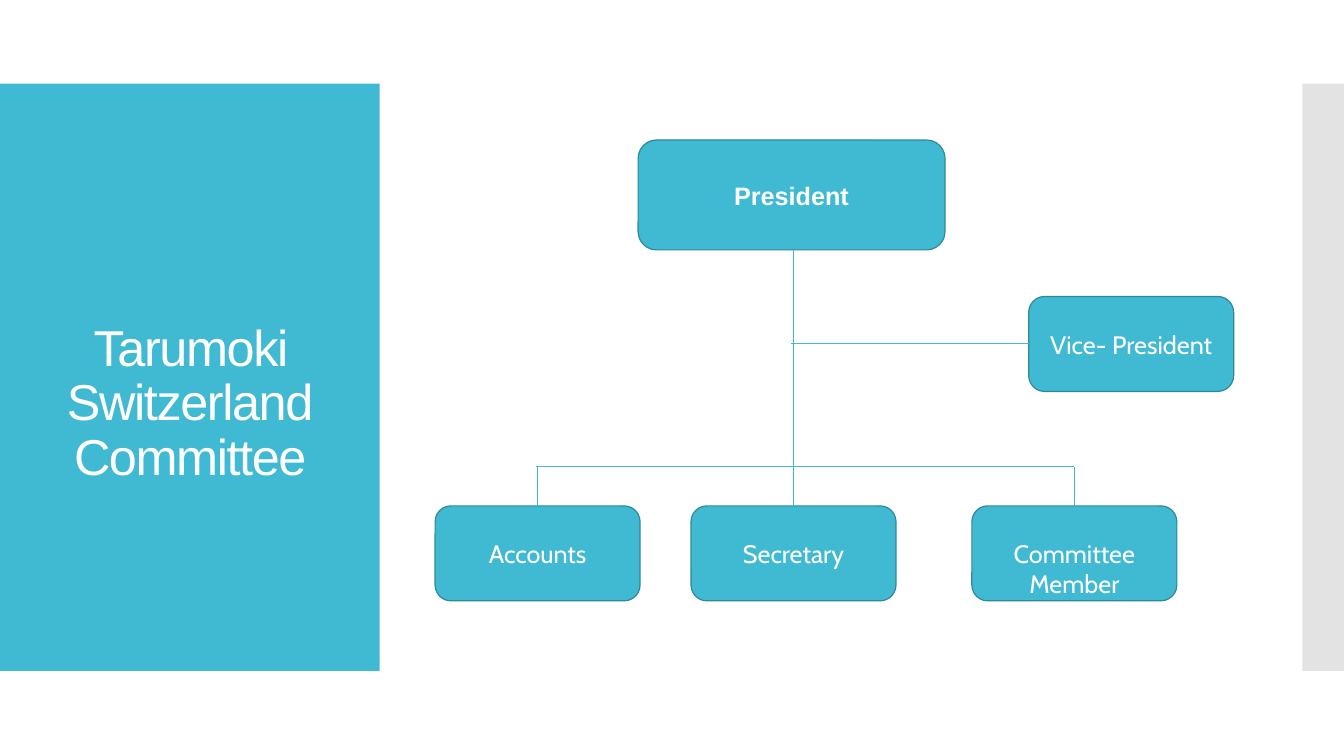
from lxml import etree
from pptx import Presentation
from pptx.dml.color import RGBColor
from pptx.enum.shapes import MSO_CONNECTOR, MSO_SHAPE
from pptx.enum.text import MSO_ANCHOR, PP_ALIGN
from pptx.oxml.ns import qn
from pptx.util import Pt

TEAL = RGBColor(0x40, 0xBA, 0xD2)
EDGE = RGBColor(0x2F, 0x88, 0x99)
GREY = RGBColor(0xC8, 0xC8, 0xC8)
WHITE = RGBColor(0xFF, 0xFF, 0xFF)
RECT, ROUND = MSO_SHAPE.RECTANGLE, MSO_SHAPE.ROUNDED_RECTANGLE
LINE = MSO_CONNECTOR.STRAIGHT
MIDDLE, CENTER = MSO_ANCHOR.MIDDLE, PP_ALIGN.CENTER

deck = Presentation()
deck.slide_width, deck.slide_height = Pt(960), Pt(540)
slide = deck.slides.add_slide(deck.slide_layouts[6])
shapes = slide.shapes


def write(shape, text, size, font, top=3.6, bottom=3.6, bold=False):
    frame = shape.text_frame
    frame.text = text
    frame.word_wrap = True
    frame.vertical_anchor = MIDDLE
    frame.margin_left = frame.margin_right = Pt(3.6)
    frame.margin_top, frame.margin_bottom = Pt(top), Pt(bottom)
    for para in frame.paragraphs:
        para.alignment = CENTER
        for run in para.runs:
            run.font.size, run.font.name = Pt(size), font
            run.font.bold = bold
            run.font.color.rgb = WHITE


def link(x1, y1, x2, y2, box=None, side=0):
    line = shapes.add_connector(LINE, Pt(x1), Pt(y1), Pt(x2), Pt(y2))
    line.line.color.rgb = TEAL
    line.line.width = Pt(0.75)
    etree.SubElement(line._element.spPr, qn("a:effectLst"))
    if box is not None:
        line.begin_connect(box, side)


# Side bands
for left, width, color in ((0, 271.2, TEAL), (930.2, 29.8, GREY)):
    band = shapes.add_shape(RECT, Pt(left), Pt(59.8), Pt(width), Pt(419.5))
    band.shadow.inherit = False
    band.fill.solid()
    band.fill.fore_color.rgb = color
    band.line.fill.background()

# The grey band is half transparent
tint = band._element.spPr.find(".//" + qn("a:srgbClr"))
etree.SubElement(tint, qn("a:alpha"), val="50000")

# Title, set below the middle of its box
title = shapes.add_textbox(Pt(20), Pt(88.6), Pt(231.8), Pt(362))
write(title, "Tarumoki Switzerland\nCommittee", 36, "Arial", top=42)
for para in title.text_frame.paragraphs:
    para.line_spacing = 0.9
    for run in para.runs:
        run.font._element.set("spc", "-100")

# Boxes: name, left, top, width, height, font
WIDE, HIGH, ROW, BUS = 146.4, 67.8, 361.4, 333.4
roles = (
    ("President", 455.8, 100, 219.2, 78.5, "Arial"),
    ("Vice- President", 734.8, 211.8, WIDE, HIGH, "Cabin"),
    ("Accounts", 310.8, ROW, WIDE, HIGH, "Cabin"),
    ("Secretary", 493.6, ROW, WIDE, HIGH, "Cabin"),
    ("Committee Member", 694.2, ROW, WIDE, HIGH, "Cabin"),
)
boxes = {}
for name, left, top, width, height, font in roles:
    box = shapes.add_shape(ROUND, Pt(left), Pt(top), Pt(width), Pt(height))
    box.shadow.inherit = False
    box.fill.solid()
    box.fill.fore_color.rgb = TEAL
    box.line.color.rgb = EDGE
    box.line.width = Pt(0.85)
    write(box, name, 18, font, bold=name == "President")
    boxes[name] = box

# The two-line label sits low in its box
member = boxes["Committee Member"].text_frame
member.margin_top, member.margin_bottom = Pt(22), Pt(0)

# Trunk, bus and branches
trunk = 493.6 + WIDE / 2
link(trunk, 178.5, trunk, BUS)
link(383, BUS, 767.4, BUS)
for name, left, top, *rest in roles[2:]:
    mid = left + WIDE / 2
    link(mid, ROW, mid, BUS, boxes[name])
vice = 211.8 + HIGH / 2
link(734.8, vice, 565.2, vice, boxes["Vice- President"], 1)

deck.save("out.pptx")
